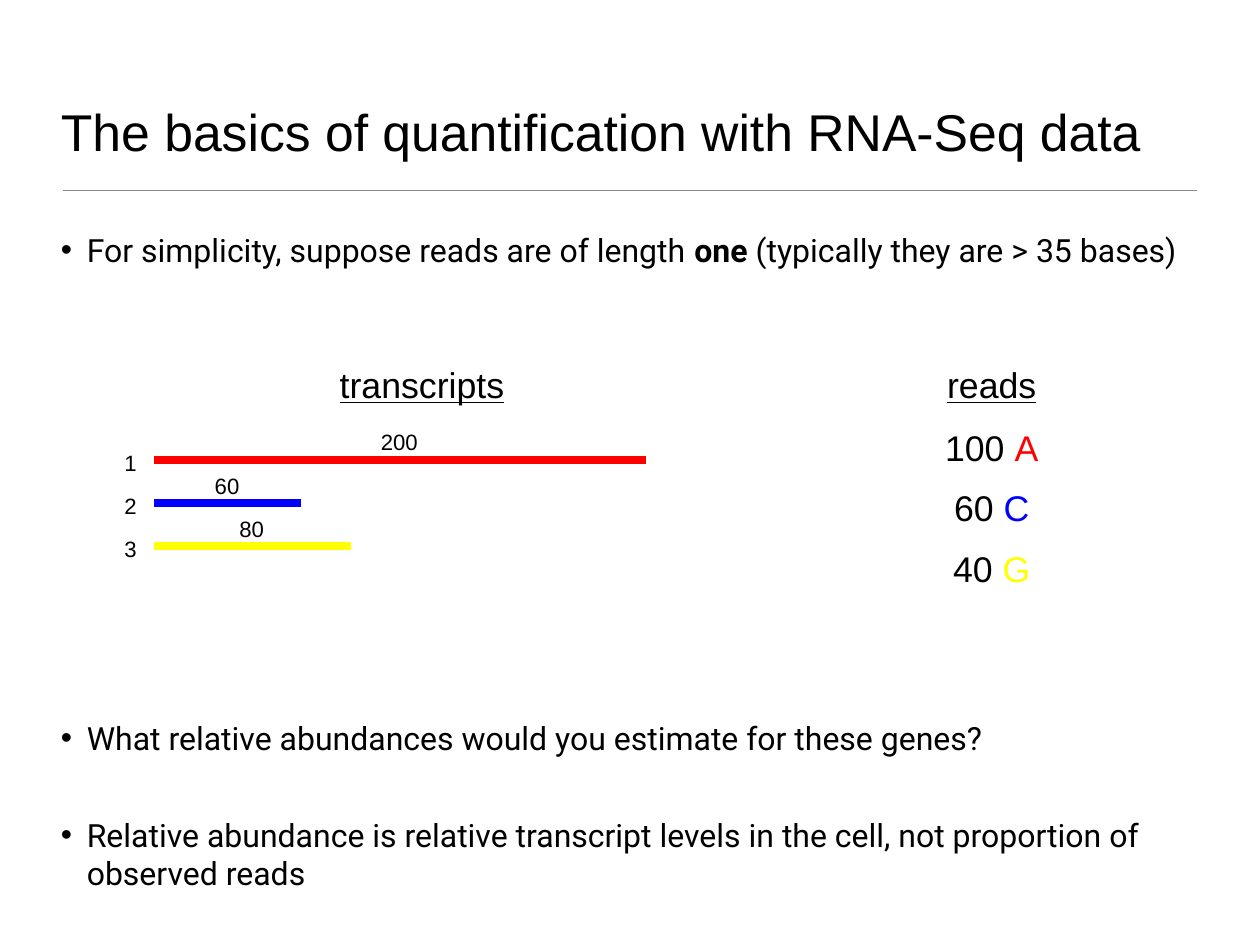
"""Build the slide on the basics of quantification with RNA-Seq data."""
from dataclasses import dataclass

from lxml.etree import SubElement
from pptx import Presentation
from pptx.dml.color import RGBColor
from pptx.enum.shapes import MSO_CONNECTOR
from pptx.enum.text import MSO_ANCHOR, MSO_AUTO_SIZE, PP_ALIGN
from pptx.oxml.ns import qn
from pptx.util import Pt


@dataclass(frozen=True)
class Theme:
    """Colours, fonts and type sizes of the slide."""
    ink: str = "000000"
    rule: str = "888888"
    red: str = "FF0000"
    blue: str = "0000FF"
    gold: str = "FFFF00"
    sans: str = "Arial"
    body: str = "Roboto"
    title: int = 42
    text: int = 26
    head: int = 29
    label: int = 18


LOOK = Theme()
TITLE = "The basics of quantification with RNA-Seq data"
POINTS = [
    (0, [("For simplicity, suppose reads are of length ", {}), ("one", {"bold": True}),
         (" (typically they are > 35 bases)", {})]),
    (365, [("What relative abundances would you estimate for these genes?", {})]),
    (48, [("Relative abundance is relative transcript levels in the cell, "
           "not proportion of observed reads", {})]),
]
HEADS = [("transcripts", 343), ("reads", 806)]
GENES = [(200, LOOK.red), (60, LOOK.blue), (80, LOOK.gold)]
READS = [(100, "A", LOOK.red), (60, "C", LOOK.blue), (40, "G", LOOK.gold)]

LEFT, WIDTH, PAD = 45, 934, 4.5
BAR_X, BAR_Y, BAR_GAP, SCALE = 125, 373.7, 35, 2
HEAD_Y, READ_X, READ_Y, READ_GAP = 309, 806, 360, 49


def assign(item, values):
    """Set each attribute named in values."""
    for name, value in values.items():
        setattr(item, name, value)


def frame_up(shape, pad, anchor, wrap):
    """Format the text frame of a shape and return it."""
    frame = shape.text_frame
    sides = ("left", "top", "right", "bottom")
    assign(frame, {f"margin_{side}": Pt(pad) for side in sides})
    assign(frame, {"vertical_anchor": anchor, "word_wrap": wrap,
                   "auto_size": MSO_AUTO_SIZE.NONE})
    return frame


def add_run(para, text, size, font=LOOK.sans, ink=LOOK.ink, **extra):
    """Add a formatted run to a paragraph."""
    run = para.add_run()
    run.text = text
    assign(run.font, {"name": font, "size": Pt(size), **extra})
    run.font.color.rgb = RGBColor.from_string(ink)


def add_line(slide, start, end, y, ink, width):
    """Draw a level line without a shadow."""
    line = slide.shapes.add_connector(
        MSO_CONNECTOR.STRAIGHT, Pt(start), Pt(y), Pt(end), Pt(y))
    line.line.width = Pt(width)
    line.line.color.rgb = RGBColor.from_string(ink)
    SubElement(line._element.spPr, qn("a:effectLst"))


def add_label(slide, mid, y, runs, size, **extra):
    """Add a label centred on a point, with runs of text and colour."""
    wide, high = 140 if size == LOOK.head else 40, size * 1.44
    box = slide.shapes.add_textbox(
        Pt(mid - wide / 2), Pt(y - high / 2), Pt(wide), Pt(high))
    para = frame_up(box, 0, MSO_ANCHOR.BOTTOM, False).paragraphs[0]
    para.alignment = PP_ALIGN.CENTER
    for text, ink in runs:
        add_run(para, text, size, ink=ink, **extra)


def add_title(slide):
    """Place and fill the title."""
    title = slide.shapes.title
    assign(title, {"left": Pt(LEFT), "top": Pt(26), "width": Pt(WIDTH), "height": Pt(110)})
    para = frame_up(title, PAD, MSO_ANCHOR.BOTTOM, True).paragraphs[0]
    para.alignment = PP_ALIGN.LEFT
    add_run(para, TITLE, LOOK.title)


def add_points(slide):
    """Add the bulleted text around the diagram."""
    box = slide.shapes.add_textbox(Pt(LEFT), Pt(183), Pt(WIDTH), Pt(517))
    frame = frame_up(box, PAD, MSO_ANCHOR.TOP, True)
    for index, (space, runs) in enumerate(POINTS):
        para = frame.add_paragraph() if index else frame.paragraphs[0]
        para.space_before = Pt(space)
        props = para._p.get_or_add_pPr()
        props.set("marL", str(Pt(21)))
        props.set("indent", str(-Pt(21)))
        SubElement(props, qn("a:buFont"), typeface=LOOK.sans)
        SubElement(props, qn("a:buChar"), char="•")
        for text, extra in runs:
            add_run(para, text, LOOK.text, LOOK.body, **extra)


def add_genes(slide):
    """Draw the transcripts to scale with number and length."""
    for index, (size, ink) in enumerate(GENES):
        y, span = BAR_Y + index * BAR_GAP, size * SCALE
        add_line(slide, BAR_X, BAR_X + span, y, ink, 6)
        add_label(slide, BAR_X - 19, y, [(str(index + 1), LOOK.ink)], LOOK.label)
        add_label(slide, BAR_X + span / 2 - 0.5, y - 16.5, [(str(size), LOOK.ink)], LOOK.label)


def add_reads(slide):
    """List the read counts by base."""
    for index, (count, base, ink) in enumerate(READS):
        runs = [(f"{count} ", LOOK.ink), (base, ink)]
        add_label(slide, READ_X, READ_Y + index * READ_GAP, runs, LOOK.head)


def main():
    """Build and save the slide."""
    deck = Presentation()
    assign(deck, {"slide_width": Pt(1024), "slide_height": Pt(768)})
    slide = deck.slides.add_slide(deck.slide_layouts[5])
    add_title(slide)
    add_line(slide, 51, 973, 155, LOOK.rule, 1)
    add_points(slide)
    for text, mid in HEADS:
        add_label(slide, mid, HEAD_Y, [(text, LOOK.ink)], LOOK.head, underline=True)
    add_genes(slide)
    add_reads(slide)
    deck.save("out.pptx")


if __name__ == "__main__":
    main()
